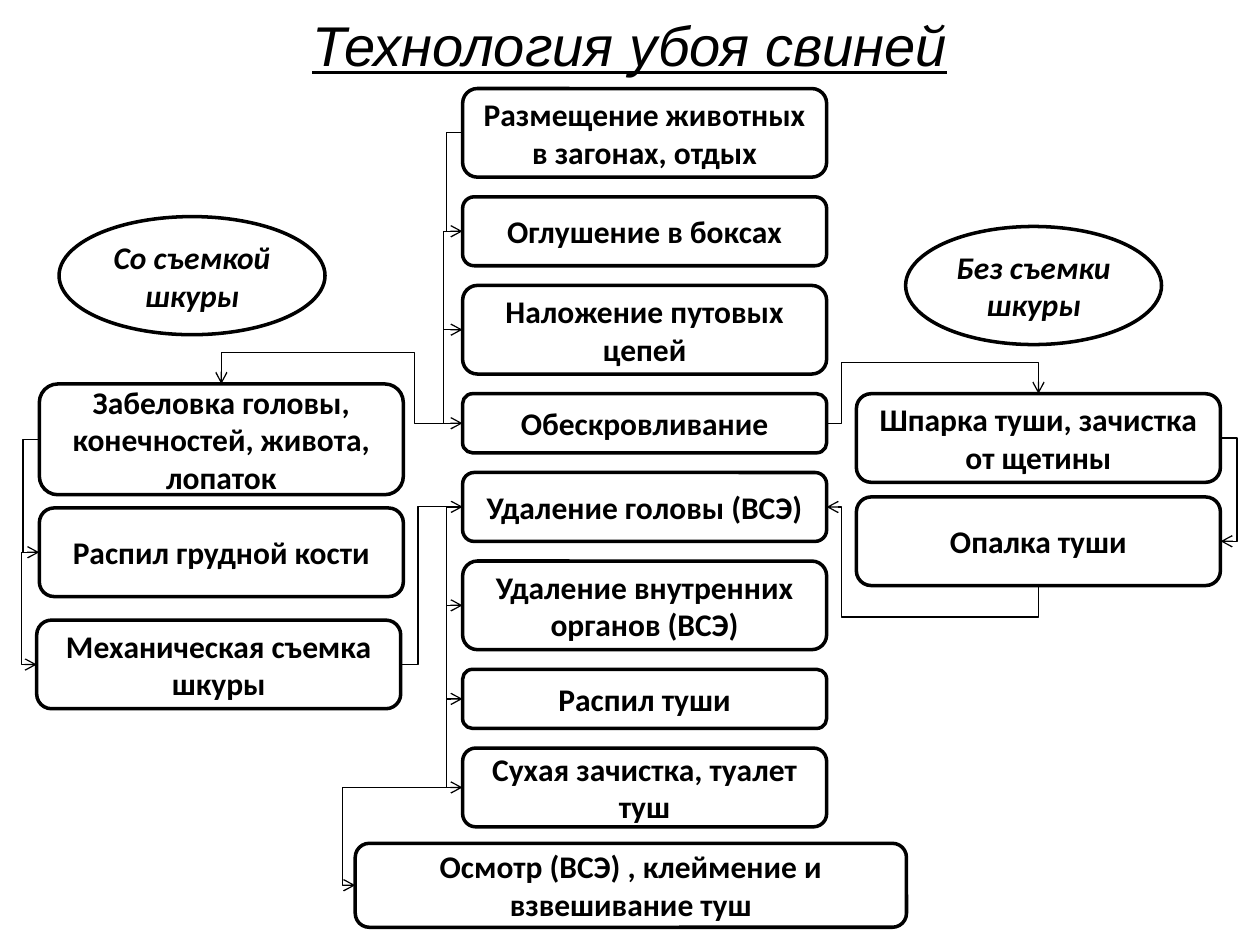
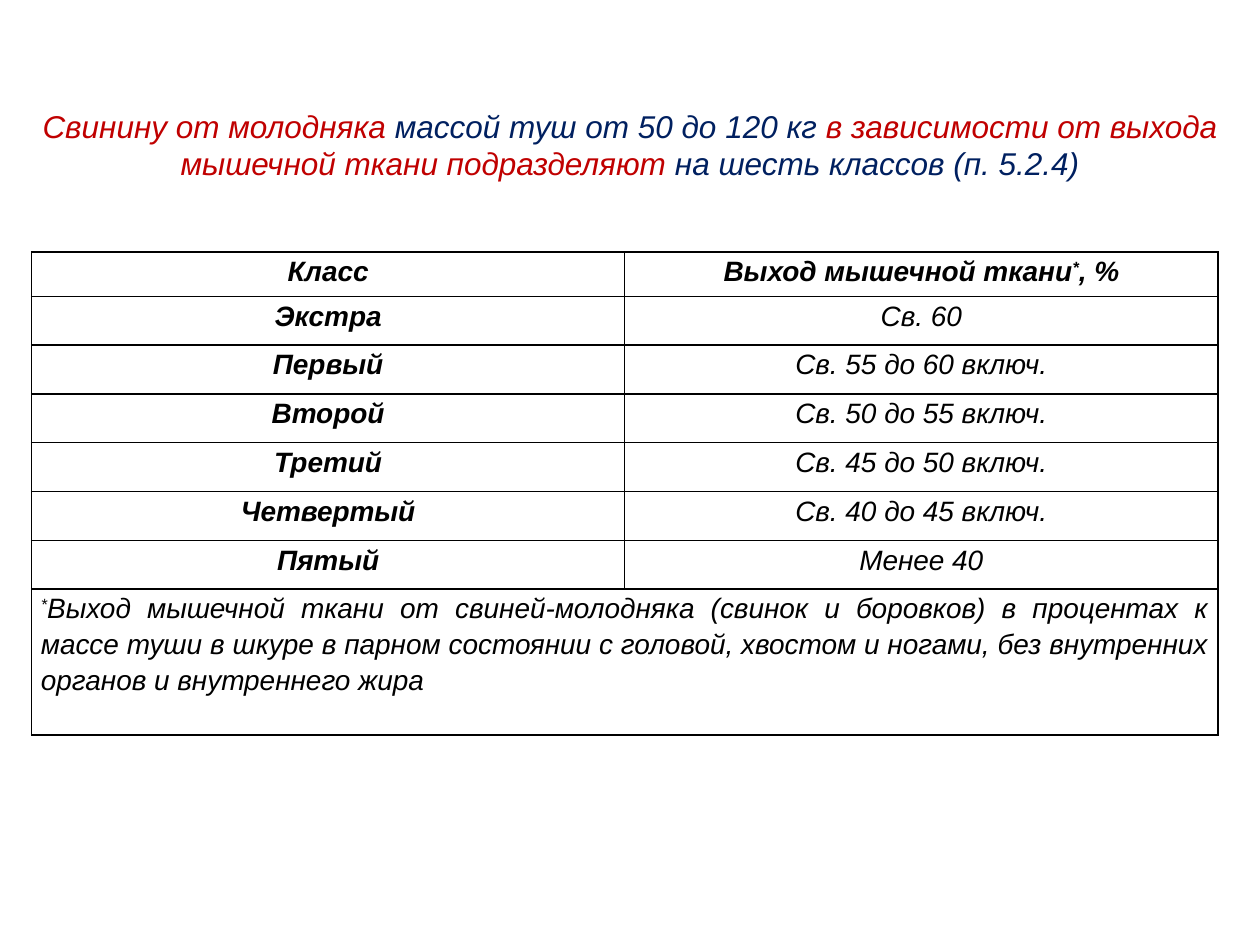
from dataclasses import dataclass
from typing import NamedTuple, Optional

from lxml import etree
from pptx import Presentation
from pptx.dml.color import RGBColor
from pptx.enum import shapes, text
from pptx.oxml.ns import qn
from pptx.util import Pt

BLACK, WHITE, RED, NAVY = "000000", "FFFFFF", "C00000", "002060"
HEAD, BODY = "Arial", "Calibri"
TOP, LEFT, BOTTOM, RIGHT = range(4)
CENTER = text.PP_ALIGN.CENTER
ROUND = shapes.MSO_SHAPE.ROUNDED_RECTANGLE
OVAL = shapes.MSO_SHAPE.OVAL


@dataclass
class Box:
    label: str
    x: float
    y: float
    w: float
    h: float
    kind: int = ROUND


class Link(NamedTuple):
    """An elbow arrow; x and y are where its middle legs run."""
    start: str
    out: int
    end: str
    into: int
    x: float
    y: Optional[float] = None


class Part(NamedTuple):
    words: str
    color: str = BLACK
    raised: bool = False


# Main column: name, label, height
STEPS = [
    ("pens", "Размещение животных в загонах, отдых", 50.62),
    ("stun", "Оглушение в боксах", 39.38),
    ("chain", "Наложение путовых цепей", 50.62),
    ("bleed", "Обескровливание", 33.75),
    ("head", "Удаление головы (ВСЭ)", 39.38),
    ("organs", "Удаление внутренних органов (ВСЭ)", 50.62),
    ("split", "Распил туши", 33.75),
    ("clean", "Сухая зачистка, туалет туш", 45),
]
STEP_X, STEP_Y, STEP_W, STEP_GAP = 264.4, 50.62, 208, 11.25

SIDES = {
    "skin": Box("Забеловка головы, конечностей, живота, лопаток",
                22.5, 219.4, STEP_W, 63.3),
    "chest": Box("Распил грудной кости", 22.5, 290.3, STEP_W, 50.62),
    "strip": Box("Механическая съемка шкуры", 21, 354.4, STEP_W, 50.62),
    "scald": Box("Шпарка туши, зачистка от щетины",
                 489.4, 225, STEP_W, 50.62),
    "singe": Box("Опалка туши", 489.4, 284, STEP_W, 50.62),
    "stamp": Box("Осмотр (ВСЭ) , клеймение и взвешивание туш",
                 203, 481.9, 315, 48),
    "with": Box("Со съемкой шкуры", 33.75, 123.75, 152, 67.5, OVAL),
    "without": Box("Без съемки шкуры", 517.5, 129.4, 146.25, 67.5, OVAL),
}

LINKS = [
    Link("pens", LEFT, "stun", LEFT, 254.4),
    Link("stun", LEFT, "chain", LEFT, 252.9),
    Link("chain", LEFT, "bleed", LEFT, 252.9),
    Link("bleed", LEFT, "skin", TOP, 236.7, 201.4),
    Link("bleed", RIGHT, "scald", TOP, 480.9, 207),
    Link("skin", LEFT, "chest", LEFT, 12.5),
    Link("chest", LEFT, "strip", LEFT, 12.25),
    Link("strip", RIGHT, "head", LEFT, 238.9),
    Link("scald", RIGHT, "singe", RIGHT, 707.5),
    Link("singe", BOTTOM, "head", RIGHT, 480.9, 352.6),
    Link("head", LEFT, "organs", LEFT, 254.4),
    Link("organs", LEFT, "split", LEFT, 254.4),
    Link("split", LEFT, "clean", LEFT, 254.4),
    Link("clean", LEFT, "stamp", LEFT, 195.7),
]

GRADES = [
    ("Экстра", "Св. 60"),
    ("Первый", "Св. 55 до 60 включ."),
    ("Второй", "Св. 50 до 55 включ."),
    ("Третий", "Св. 45 до 50 включ."),
    ("Четвертый", "Св. 40 до 45 включ."),
    ("Пятый", "Менее 40"),
]
NOTE = ("Выход мышечной ткани от свиней-молодняка (свинок и боровков) "
        "в процентах к массе туши в шкуре в парном состоянии с головой, "
        "хвостом и ногами, без внутренних органов и внутреннего жира")


def rgb(color: str) -> RGBColor:
    return RGBColor.from_string(color)


def write(para, parts: list[Part], face: str, size: float, bold=False,
          italic=False, align=CENTER) -> None:
    para.alignment = align
    font = para.font
    font.name, font.size = face, Pt(size)
    font.bold, font.italic = bold, italic
    for part in parts:
        run = para.add_run()
        run.text = part.words
        run.font.color.rgb = rgb(part.color)
        if part.raised:
            run.font._element.set("baseline", "30000")


def add_title(slide, parts: list[Part], y: float, h: float, size: float):
    title = slide.shapes.title
    title.left, title.top, title.width, title.height = map(
        Pt, (0, y, 720, h))
    frame = title.text_frame
    frame.auto_size = text.MSO_AUTO_SIZE.NONE
    frame.vertical_anchor = text.MSO_ANCHOR.MIDDLE
    write(frame.paragraphs[0], parts, HEAD, size, italic=True)
    return title


def draw_box(slide, box: Box):
    shape = slide.shapes.add_shape(
        box.kind, *map(Pt, (box.x, box.y, box.w, box.h)))
    shape.shadow.inherit = False
    shape.fill.solid()
    shape.fill.fore_color.rgb = rgb(WHITE)
    shape.line.color.rgb = rgb(BLACK)
    shape.line.width = Pt(2)
    frame = shape.text_frame
    frame.word_wrap = True
    frame.vertical_anchor = text.MSO_ANCHOR.MIDDLE
    write(frame.paragraphs[0], [Part(box.label)], BODY, 18, bold=True,
          italic=box.kind == OVAL)
    return shape


def bend(line, link: Link) -> None:
    """Turn the elbow and set its legs."""
    x1, y1, x2, y2 = line.begin_x, line.begin_y, line.end_x, line.end_y
    ratios = [(Pt(link.x) - x1) / (x2 - x1)]
    if link.y is not None:
        ratios.append((Pt(link.y) - y1) / (y2 - y1))
    props = line._element.spPr
    xfrm = props.find(qn("a:xfrm"))
    for flip in ("flipH", "flipV"):
        xfrm.attrib.pop(flip, None)
    if link.out == BOTTOM:
        ratios.reverse()
        wide, high = line.height, line.width
        line.left = (x1 + x2 - wide) // 2
        line.top = (y1 + y2 - high) // 2
        line.width, line.height = wide, high
        xfrm.set("rot", "5400000")
        xfrm.set("flipH", "1")
    else:
        if x2 < x1:
            xfrm.set("rot", "10800000")
        if (x2 < x1) != (y2 < y1):
            xfrm.set("flipV", "1")
    geom = props.find(qn("a:prstGeom"))
    geom.set("prst", f"bentConnector{len(ratios) + 2}")
    guides = geom.find(qn("a:avLst"))
    if guides is None:
        guides = etree.SubElement(geom, qn("a:avLst"))
    for num, ratio in enumerate(ratios, 1):
        etree.SubElement(guides, qn("a:gd"), name=f"adj{num}",
                         fmla=f"val {round(ratio * 100000)}")


def draw_link(slide, link: Link, drawn: dict) -> None:
    line = slide.shapes.add_connector(
        shapes.MSO_CONNECTOR.ELBOW, Pt(0), Pt(0), Pt(9), Pt(9))
    line.begin_connect(drawn[link.start], link.out)
    line.end_connect(drawn[link.end], link.into)
    if line.begin_x == line.end_x:
        # legs are set as a share of the width, so it must not be zero
        side = 1 if link.out == RIGHT else -1
        line.end_x = line.begin_x + side * Pt(0.12)
    bend(line, link)
    line.line.color.rgb = rgb(BLACK)
    line.line.width = Pt(0.75)
    props = line._element.spPr
    etree.SubElement(props.find(qn("a:ln")), qn("a:tailEnd"), type="arrow")
    etree.SubElement(props, qn("a:effectLst"))


def fill_cell(cell, parts: list[Part], bold=False, align=CENTER) -> None:
    cell.margin_left = cell.margin_right = Pt(5.4)
    cell.margin_top = cell.margin_bottom = Pt(0)
    props = cell._tc.get_or_add_tcPr()
    for edge in ("lnL", "lnR", "lnT", "lnB"):
        line = etree.SubElement(props, qn(f"a:{edge}"), w=str(Pt(1)))
        solid = etree.SubElement(line, qn("a:solidFill"))
        etree.SubElement(solid, qn("a:srgbClr"), val=BLACK)
    cell.fill.solid()
    cell.fill.fore_color.rgb = rgb(WHITE)
    para = cell.text_frame.paragraphs[0]
    para.line_spacing = 1.15
    write(para, parts, HEAD, 16, bold, True, align)


def flow_slide(slide) -> None:
    title = add_title(slide, [Part("Технология убоя свиней")], 0, 50, 32)
    title.text_frame.paragraphs[0].font.underline = True
    boxes, y = dict(SIDES), STEP_Y
    for name, label, h in STEPS:
        boxes[name] = Box(label, STEP_X, y, STEP_W, h)
        y += h + STEP_GAP
    drawn = {name: draw_box(slide, box) for name, box in boxes.items()}
    for link in LINKS:
        draw_link(slide, link, drawn)


def grade_slide(slide) -> None:
    add_title(slide, [
        Part("Свинину от молодняка ", RED),
        Part("массой туш от 50 до 120 кг ", NAVY),
        Part("в зависимости от выхода мышечной ткани подразделяют ", RED),
        Part("на шесть классов (п. 5.2.4)", NAVY),
    ], 57, 51, 18)
    highs = [25.3] + [27.9] * len(GRADES) + [83.5]
    table = slide.shapes.add_table(
        len(highs), 2, *map(Pt, (18, 144, 678, sum(highs)))).table
    table.first_row = table.horz_banding = False
    for row, high in zip(table.rows, highs):
        row.height = Pt(high)
    star = Part("*", raised=True)
    fill_cell(table.cell(0, 0), [Part("Класс")], bold=True)
    fill_cell(table.cell(0, 1),
              [Part("Выход мышечной ткани"), star, Part(", %")], bold=True)
    for num, (grade, share) in enumerate(GRADES, 1):
        fill_cell(table.cell(num, 0), [Part(grade)], bold=True)
        fill_cell(table.cell(num, 1), [Part(share)])
    last = len(highs) - 1
    table.cell(last, 0).merge(table.cell(last, 1))
    fill_cell(table.cell(last, 0), [star, Part(NOTE)],
              align=text.PP_ALIGN.JUSTIFY)
    fill_cell(table.cell(last, 1), [])


def main() -> None:
    deck = Presentation()
    deck.slide_width, deck.slide_height = Pt(720), Pt(540)
    for build in (flow_slide, grade_slide):
        build(deck.slides.add_slide(deck.slide_layouts[5]))
    deck.save("out.pptx")


if __name__ == "__main__":
    main()
